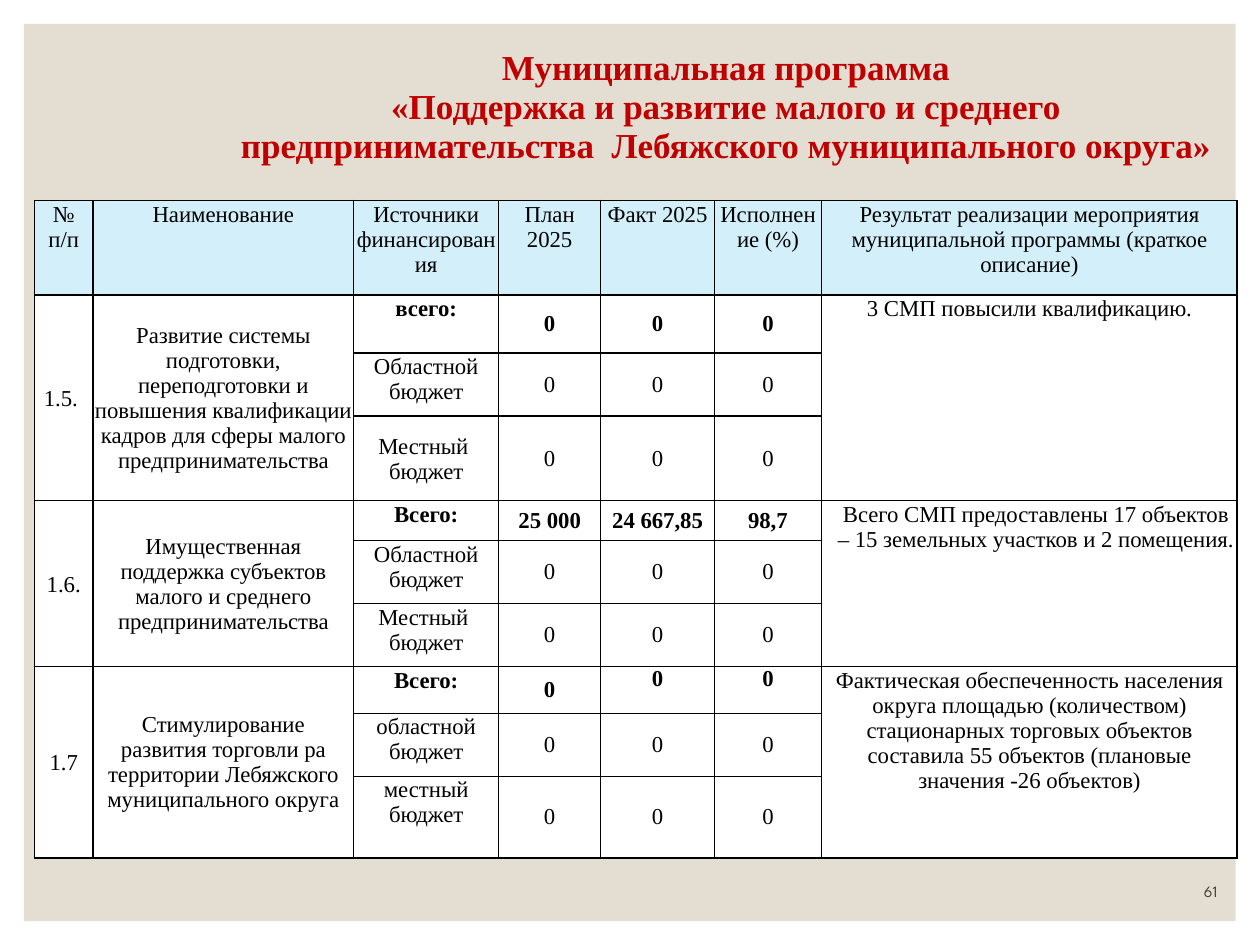
from dataclasses import dataclass

from lxml.etree import SubElement
from pptx import Presentation
from pptx.dml.color import RGBColor
from pptx.enum.shapes import MSO_SHAPE
from pptx.enum.text import MSO_ANCHOR, PP_ALIGN
from pptx.oxml.ns import qn
from pptx.util import Cm, Pt


@dataclass(frozen=True)
class Theme:
    """Colours, fonts and type sizes of the slide."""
    panel: str = "E3DED1"
    title: str = "C00000"
    header: str = "D2EFFA"
    body: str = "FFFFFF"
    ink: str = "000000"
    number: str = "404040"
    text_font: str = "Times New Roman"
    number_font: str = "League Spartan"
    title_size: int = 20
    table_size: int = 13
    number_size: int = 9


@dataclass(frozen=True)
class Inset:
    """Side, top and bottom cell margins in centimetres."""
    side: float
    top: float
    left_extra: float = 0


THEME = Theme()
TIGHT = Inset(0.03, 0.03)
WIDE = Inset(0.18, 0)
INDENTED = Inset(0.03, 0.03, 0.25)
TOP, MIDDLE = MSO_ANCHOR.TOP, MSO_ANCHOR.MIDDLE
SIDES = ("L", "R", "T", "B")

COLUMNS = (1.17, 5.26, 2.92, 2.06, 2.29, 2.16, 8.38)
ROWS = (1.91, 1.17, 1.27, 1.7, 0.81, 1.27, 1.27, 0.94, 1.27, 1.65)
MERGED_COLUMNS = (0, 1, 6)
TITLE = (
    "Муниципальная программа\n"
    "«Поддержка и развитие малого и среднего предпринимательства  "
    "Лебяжского муниципального округа»"
)
HEADERS = (
    "№ п/п", "Наименование", "Источники финансирования", "План 2025", "Факт 2025",
    "Исполнение (%)",
    "Результат реализации мероприятия муниципальной программы (краткое описание)",
)
ZEROS = ("0", "0", "0")
MEASURES = (
    (
        ("1.5. ",
         "Развитие системы подготовки, переподготовки и повышения квалификации "
         "кадров для сферы малого предпринимательства",
         "3 СМП повысили квалификацию."),
        (("всего:", ZEROS), ("Областной бюджет", ZEROS), ("Местный  бюджет", ZEROS)),
    ),
    (
        ("1.6.",
         "Имущественная поддержка субъектов малого и среднего предпринимательства",
         "Всего СМП предоставлены 17 объектов – 15 земельных участков и 2 помещения."),
        (("Всего:", ("25 000", "24 667,85", "98,7")),
         ("Областной бюджет", ZEROS), ("Местный  бюджет", ZEROS)),
    ),
    (
        ("1.7",
         "Стимулирование развития торговли ра территории Лебяжского муниципального округа",
         "Фактическая обеспеченность населения округа площадью (количеством) "
         "стационарных торговых объектов составила 55 объектов "
         "(плановые значения -26 объектов)"),
        (("Всего:", ZEROS), ("областной\nбюджет", ZEROS), ("местный бюджет", ZEROS)),
    ),
)


def format_text(frame, font, size, color, bold=False, align=PP_ALIGN.CENTER):
    """Format every run of a text frame."""
    for para in frame.paragraphs:
        para.alignment = align
        for span in para.runs:
            span.font.name = font
            span.font.size = Pt(size)
            span.font.bold = bold
            span.font.color.rgb = RGBColor.from_string(color)


def set_borders(cell, width, visible=SIDES):
    """Draw the visible sides of a cell and clear the others."""
    properties = cell._tc.get_or_add_tcPr()
    for side in SIDES:
        line = SubElement(properties, qn(f"a:ln{side}"), w=str(Pt(width)))
        if side in visible:
            fill = SubElement(line, qn("a:solidFill"))
            SubElement(fill, qn("a:srgbClr"), val=THEME.ink)
        else:
            SubElement(line, qn("a:noFill"))


def fill_cell(cell, text, inset=TIGHT, anchor=TOP, bold=False,
              size=THEME.table_size, color=THEME.ink):
    """Write text into a cell and place it."""
    cell.text_frame.text = text
    cell.vertical_anchor = anchor
    cell.margin_left = Cm(inset.side + inset.left_extra)
    cell.margin_right = Cm(inset.side)
    cell.margin_top, cell.margin_bottom = Cm(inset.top), Cm(0)
    format_text(cell.text_frame, THEME.text_font, size, color, bold)


def add_grid(page, left, top, columns, rows):
    """Add an unbanded table with the given column widths and row heights."""
    frame = page.shapes.add_table(len(rows), len(columns), Cm(left), Cm(top),
                                  Cm(sum(columns)), Cm(sum(rows)))
    table = frame.table
    table.first_row = table.horz_banding = False
    for column, width in zip(table.columns, columns):
        column.width = Cm(width)
    for row, height in zip(table.rows, rows):
        row.height = Cm(height)
    return table


def add_panel(page):
    """Add the beige panel behind the content."""
    panel = page.shapes.add_shape(MSO_SHAPE.RECTANGLE, Cm(0.48), Cm(0.48),
                                  Cm(24.43), Cm(18.09))
    panel.shadow.inherit = False
    panel.fill.solid()
    panel.fill.fore_color.rgb = RGBColor.from_string(THEME.panel)
    panel.line.fill.background()


def add_page_number(page, number):
    """Add the page number in the lower right corner."""
    box = page.shapes.add_textbox(Cm(21.74), Cm(17.53), Cm(3.05), Cm(0.76))
    frame = box.text_frame
    frame.word_wrap = True
    frame.vertical_anchor = MSO_ANCHOR.BOTTOM
    frame.text = number
    format_text(frame, THEME.number_font, THEME.number_size, THEME.number,
                align=PP_ALIGN.RIGHT)


def add_title(page):
    """Add the title as a one-cell table with a bottom rule."""
    cell = add_grid(page, 4.5, 0, (20.27,), (4.32,)).cell(0, 0)
    set_borders(cell, 0.5, visible=("B",))
    cell.fill.background()
    fill_cell(cell, TITLE, anchor=MIDDLE, bold=True,
              size=THEME.title_size, color=THEME.title)


def fill_measure(table, first, labels, sources):
    """Fill the rows of one measure, with its total in bold."""
    number, name, result = labels
    last_measure = first + len(sources) == len(ROWS)
    for column in MERGED_COLUMNS:
        table.cell(first, column).merge(table.cell(first + len(sources) - 1, column))
    label_inset = WIDE if last_measure else TIGHT
    fill_cell(table.cell(first, 0), number, label_inset, MIDDLE)
    fill_cell(table.cell(first, 1), name, label_inset, MIDDLE)
    fill_cell(table.cell(first, 6), result, INDENTED if number == "1.6." else TIGHT)
    for offset, (source, amounts) in enumerate(sources):
        row, total = first + offset, offset == 0
        fill_cell(table.cell(row, 2), source, anchor=MIDDLE if row == 3 else TOP, bold=total)
        for column, amount in enumerate(amounts, 3):
            raised = last_measure and total and column > 3
            fill_cell(table.cell(row, column), amount, WIDE,
                      TOP if raised else MIDDLE, total)


def add_measures(page):
    """Add the table of measures with funding and results."""
    table = add_grid(page, 0.7, 4.04, COLUMNS, ROWS)
    for row in range(len(ROWS)):
        for column in range(len(COLUMNS)):
            cell = table.cell(row, column)
            set_borders(cell, 1)
            cell.fill.solid()
            color = THEME.body if row else THEME.header
            cell.fill.fore_color.rgb = RGBColor.from_string(color)
    for column, header in enumerate(HEADERS):
        fill_cell(table.cell(0, column), header)
    first = 1
    for labels, sources in MEASURES:
        fill_measure(table, first, labels, sources)
        first += len(sources)


def main():
    """Build the slide and save the deck."""
    deck = Presentation()
    deck.slide_width, deck.slide_height = Cm(25.4), Cm(19.05)
    page = deck.slides.add_slide(deck.slide_layouts[6])
    add_panel(page)
    add_page_number(page, "61")
    add_title(page)
    add_measures(page)
    deck.save("out.pptx")


if __name__ == "__main__":
    main()
